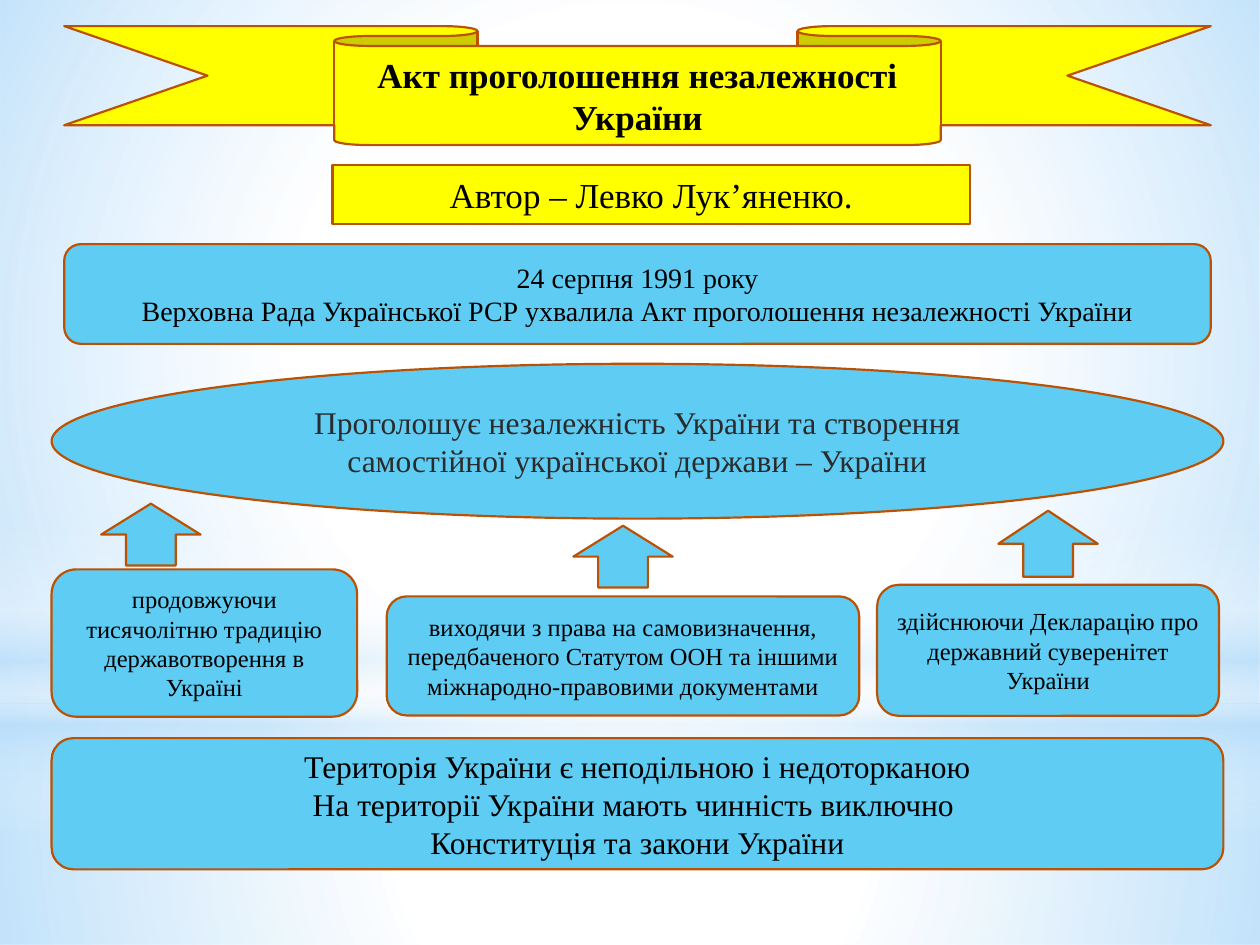
import pptx
import pptx.util
import pptx.dml.color
import pptx.enum.shapes
import pptx.enum.text
import pptx.oxml
import pptx.oxml.ns

Pt = pptx.util.Pt
RGBColor = pptx.dml.color.RGBColor
SHAPE = pptx.enum.shapes.MSO_SHAPE

YELLOW = RGBColor(0xFF, 0xFF, 0x00)
BLUE = RGBColor(0x5E, 0xCC, 0xF3)
RUST = RGBColor(0xBB, 0x52, 0x03)
BLACK = RGBColor(0, 0, 0)
CHARCOAL = RGBColor(0x29, 0x2B, 0x2C)
WHITE = RGBColor(0xFF, 0xFF, 0xFF)
HAZE = RGBColor(0xB4, 0xDC, 0xFA)
FONT = "Times New Roman"

SLIDE_W, SLIDE_H = 720, 540
NARROW = (36.7, 655.2)  # left, width of the ribbon and date bands
WIDE = (29.5, 669.6)    # left, width of the ellipse and territory bands

# Backdrop: shape, (left, top, width, height), stops (%, colour, opacity %)
RADIAL = '<a:path path="circle"><a:fillToRect l="50000" t="50000" r="50000" b="50000"/></a:path>'
DOWNWARD = '<a:lin ang="5400000" scaled="0"/>'
BACKDROP = [
    (SHAPE.RECTANGLE, (0, 401.8, SLIDE_W, 138.2), RADIAL,
     [(0, WHITE, 91), (37, WHITE, 76), (100, HAZE, 79)]),
    (SHAPE.RECTANGLE, (0, 0, SLIDE_W, 401.8), RADIAL,
     [(0, WHITE, 89), (48, WHITE, 62), (100, HAZE, 79)]),
    (SHAPE.RECTANGLE, (0, 296.6, SLIDE_W, 180), DOWNWARD,
     [(0, WHITE, 0), (29, WHITE, 30), (45, HAZE, 40),
      (55, WHITE, 26), (65, HAZE, 60), (100, WHITE, 0)]),
    (SHAPE.OVAL, (0, 126, SLIDE_W, 401.8), RADIAL,
     [(0, WHITE, 100), (56, WHITE, 0)]),
]

# Bands: shape, (left, width), top, height, fill, text size, text colour, lines
TITLE = "Акт проголошення незалежності України"
BANDS = [
    (SHAPE.ROUNDED_RECTANGLE, NARROW, 139.5, 57, BLUE, 16, BLACK,
     ["24\u00a0серпня 1991\u00a0року",
      "Верховна Рада Української РСР ухвалила Акт проголошення незалежності України"]),
    (SHAPE.RECTANGLE, (190, 364.3), 94.3, 33.8, YELLOW, 20, BLACK,
     ["Автор – Левко Лук’яненко."]),
    (SHAPE.OVAL, WIDE, 207.9, 88.5, BLUE, 18, CHARCOAL,
     ["Проголошує незалежність України та створення самостійної української держави – України"]),
    (SHAPE.ROUNDED_RECTANGLE, WIDE, 421.8, 75, BLUE, 18, BLACK,
     ["Територія України є неподільною і недоторканою",
      "На території України мають чинність виключно ",
      "Конституція та закони України"]),
]

# Grounds: text, (left, top, width, height), arrow (centre x, top, height)
ARROW_W = 56.8
GROUNDS = [
    ("продовжуючи тисячолітню традицію державотворення в Україні",
     (29.5, 325.4, 174.6, 84.2), (86.2, 287.8, 35.3)),
    ("виходячи з права на самовизначення, передбаченого Статутом ООН "
     "та іншими міжнародно-правовими документами",
     (221, 340.8, 270, 68), (356, 300.4, 35.3)),
    ("здійснюючи Декларацію про державний суверенітет України",
     (501.2, 334.2, 195.4, 74.9), (598.9, 291.8, 37.8)),
]

presentation = pptx.Presentation()
presentation.slide_width, presentation.slide_height = Pt(SLIDE_W), Pt(SLIDE_H)
slide = presentation.slides.add_slide(presentation.slide_layouts[6])


def add_plain(kind, box):
    shape = slide.shapes.add_shape(kind, *[Pt(length) for length in box])
    shape.shadow.inherit = False
    return shape


def add_outlined(kind, box, fill):
    shape = add_plain(kind, box)
    shape.fill.solid()
    shape.fill.fore_color.rgb = fill
    shape.line.color.rgb = RUST
    shape.line.width = Pt(1.25)
    return shape


def write(shape, lines, size, color, bold=False):
    frame = shape.text_frame
    frame.word_wrap = True
    frame.vertical_anchor = pptx.enum.text.MSO_ANCHOR.MIDDLE
    frame.text = "\n".join(lines)
    for paragraph in frame.paragraphs:
        paragraph.alignment = pptx.enum.text.PP_ALIGN.CENTER
        for run in paragraph.runs:
            run.font.name, run.font.size, run.font.bold = FONT, Pt(size), bold
            run.font.color.rgb = color


def add_glow(kind, box, direction, stops):
    glow = add_plain(kind, box)
    glow.line.fill.background()
    stop_xml = "".join(
        f'<a:gs pos="{position * 1000}"><a:srgbClr val="{color}">'
        f'<a:alpha val="{opacity * 1000}"/></a:srgbClr></a:gs>'
        for position, color, opacity in stops)
    gradient = pptx.oxml.parse_xml(
        f'<a:gradFill {pptx.oxml.ns.nsdecls("a")} rotWithShape="1">'
        f'<a:gsLst>{stop_xml}</a:gsLst>{direction}</a:gradFill>')
    properties = glow._element.spPr
    properties.find(pptx.oxml.ns.qn("a:prstGeom")).addnext(gradient)


# Backdrop
for kind, box, direction, stops in BACKDROP:
    add_glow(kind, box, direction, stops)

# Title ribbon
left, width = NARROW
ribbon = add_outlined(SHAPE.DOWN_RIBBON, (left, 14.9, width, 68), YELLOW)
ribbon.adjustments[0], ribbon.adjustments[1] = 0.167, 0.529
write(ribbon, [TITLE], 20, BLACK, bold=True)

# Bands
for kind, (left, width), top, height, fill, size, color, lines in BANDS:
    band = add_outlined(kind, (left, top, width, height), fill)
    write(band, lines, size, color)

# Grounds, each with an arrow up to the ellipse
for text, box, (centre, arrow_top, arrow_height) in GROUNDS:
    write(add_outlined(SHAPE.ROUNDED_RECTANGLE, box, BLUE), [text], 14, BLACK)
    arrow = add_outlined(
        SHAPE.DOWN_ARROW,
        (centre - ARROW_W / 2, arrow_top, ARROW_W, arrow_height), BLUE)
    arrow.rotation = 180

presentation.save("out.pptx")
